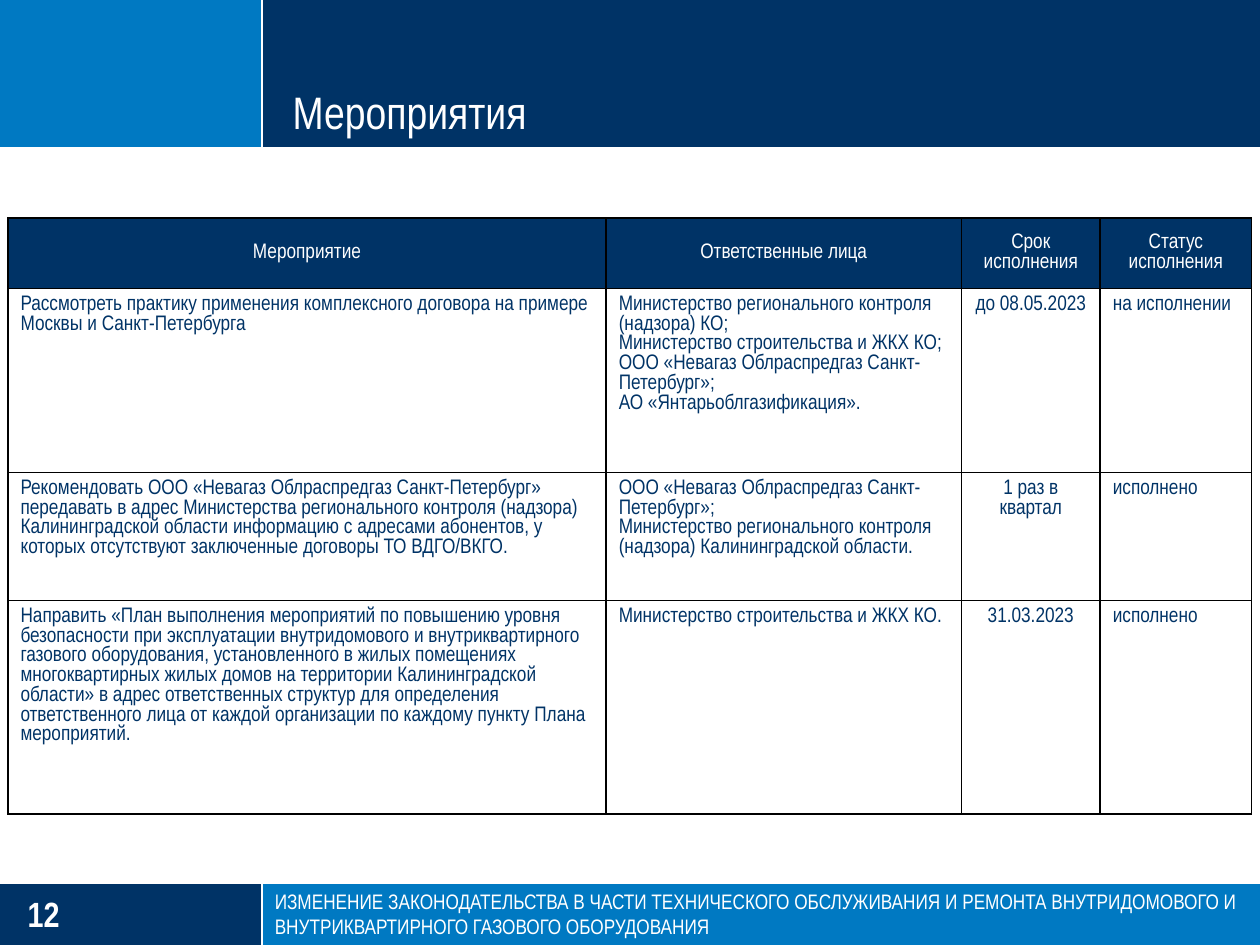
from lxml.etree import SubElement
from pptx import Presentation
from pptx.dml.color import RGBColor
from pptx.enum.shapes import MSO_CONNECTOR as Connector, MSO_SHAPE as Shape
from pptx.enum.text import MSO_ANCHOR as Anchor, PP_ALIGN as Align
from pptx.oxml.ns import qn
from pptx.util import Cm, Pt

NAVY, BLUE, WHITE, BLACK = "003366", "0079C2", "FFFFFF", "000000"
FONT = "Arial Narrow"
WIDTH, HEIGHT = 25.4, 19.05
DIVIDER_X, HEADER_BOTTOM, FOOTER_TOP = 5.28, 2.98, 17.8

COLUMN_WIDTHS = [12.06, 7.16, 2.8, 3.05]
ROW_HEIGHTS = [1.43, 3.71, 2.58, 4.3]
HEADINGS = ["Мероприятие", "Ответственные лица", "Срок исполнения", "Статус исполнения"]
GAS_SUPPLIER = "ООО «Невагаз Облраспредгаз Санкт-Петербург»"
ACTIVITIES = [
    ["Рассмотреть практику применения комплексного договора на примере Москвы и Санкт-Петербурга",
     "Министерство регионального контроля (надзора) КО;\n"
     "Министерство строительства и ЖКХ КО;\n"
     f"{GAS_SUPPLIER};\n"
     "АО «Янтарьоблгазификация».",
     "до 08.05.2023", "на исполнении"],
    [f"Рекомендовать {GAS_SUPPLIER} передавать в адрес Министерства регионального "
     "контроля (надзора) Калининградской области информацию с адресами абонентов, "
     "у которых отсутствуют заключенные договоры ТО ВДГО/ВКГО.",
     f"{GAS_SUPPLIER};\n"
     "Министерство регионального контроля (надзора) Калининградской области.",
     "1 раз в квартал", "исполнено"],
    ["Направить «План выполнения мероприятий по повышению уровня безопасности при "
     "эксплуатации внутридомового и внутриквартирного газового оборудования, "
     "установленного в жилых помещениях многоквартирных жилых домов на территории "
     "Калининградской области» в адрес ответственных структур для определения "
     "ответственного лица от каждой организации по каждому пункту Плана мероприятий.",
     "Министерство строительства и ЖКХ КО.",
     "31.03.2023", "исполнено"],
]
FOOTER = ("ИЗМЕНЕНИЕ ЗАКОНОДАТЕЛЬСТВА В ЧАСТИ ТЕХНИЧЕСКОГО ОБСЛУЖИВАНИЯ И РЕМОНТА "
          "ВНУТРИДОМОВОГО И ВНУТРИКВАРТИРНОГО ГАЗОВОГО ОБОРУДОВАНИЯ")


def rgb(color):
    return RGBColor.from_string(color)


def write_text(frame, text, size=12, color=WHITE, bold=False, align=Align.LEFT):
    """Write one paragraph per line of text."""
    for index, line in enumerate(text.split("\n")):
        paragraph = frame.add_paragraph() if index else frame.paragraphs[0]
        paragraph.alignment = align
        run = paragraph.add_run()
        run.text = line
        run.font.name, run.font.size, run.font.bold = FONT, Pt(size), bold
        run.font.color.rgb = rgb(color)


def add_band(slide, left, top, width, height, color):
    band = slide.shapes.add_shape(Shape.RECTANGLE, Cm(left), Cm(top), Cm(width), Cm(height))
    band.shadow.inherit = False
    band.fill.solid()
    band.fill.fore_color.rgb = rgb(color)
    band.line.fill.background()


def add_rule(slide, x1, y1, x2, y2):
    rule = slide.shapes.add_connector(Connector.STRAIGHT, Cm(x1), Cm(y1), Cm(x2), Cm(y2))
    rule.line.color.rgb = rgb(WHITE)
    rule.line.width = Pt(1.25)
    SubElement(rule._element.spPr, qn("a:effectLst"))


def add_label(slide, left, top, width, height, text, anchor=Anchor.MIDDLE, **text_format):
    frame = slide.shapes.add_textbox(Cm(left), Cm(top), Cm(width), Cm(height)).text_frame
    frame.word_wrap = True
    frame.vertical_anchor = anchor
    frame.margin_left = frame.margin_right = frame.margin_top = frame.margin_bottom = 0
    write_text(frame, text, **text_format)


def add_borders(cell):
    properties = cell._tc.get_or_add_tcPr()
    for side in ("lnL", "lnR", "lnT", "lnB"):
        border = SubElement(properties, qn(f"a:{side}"), w=str(Pt(1)))
        fill = SubElement(border, qn("a:solidFill"))
        SubElement(fill, qn("a:srgbClr"), val=BLACK)


def add_activity_table(slide, left, top):
    rows = [HEADINGS] + ACTIVITIES
    table = slide.shapes.add_table(
        len(rows), len(HEADINGS), Cm(left), Cm(top),
        Cm(sum(COLUMN_WIDTHS)), Cm(sum(ROW_HEIGHTS))).table
    table.first_row = table.horz_banding = False
    for column, width in zip(table.columns, COLUMN_WIDTHS):
        column.width = Cm(width)
    for row, height in zip(table.rows, ROW_HEIGHTS):
        row.height = Cm(height)

    for r, texts in enumerate(rows):
        heading = r == 0
        for c, text in enumerate(texts):
            cell = table.cell(r, c)
            add_borders(cell)
            cell.vertical_anchor = Anchor.MIDDLE if heading else Anchor.TOP
            if heading:
                cell.fill.solid()
                cell.fill.fore_color.rgb = rgb(NAVY)
            else:
                cell.fill.background()
            centred = heading or HEADINGS[c] == "Срок исполнения"
            write_text(cell.text_frame, text, color=WHITE if heading else NAVY,
                       align=Align.CENTER if centred else Align.LEFT)


def main():
    deck = Presentation()
    deck.slide_width, deck.slide_height = Cm(WIDTH), Cm(HEIGHT)
    slide = deck.slides.add_slide(deck.slide_layouts[6])

    # Header and footer bands
    add_band(slide, 0, FOOTER_TOP, WIDTH, HEIGHT - FOOTER_TOP, BLUE)
    add_band(slide, 0, FOOTER_TOP, DIVIDER_X, HEIGHT - FOOTER_TOP, NAVY)
    add_band(slide, 0, 0, DIVIDER_X, HEADER_BOTTOM, BLUE)
    add_band(slide, DIVIDER_X, 0, WIDTH - DIVIDER_X, HEADER_BOTTOM, NAVY)

    # White dividing rules
    for y in (HEADER_BOTTOM, FOOTER_TOP):
        add_rule(slide, 0, y, WIDTH, y)
    for top, bottom in ((0, HEADER_BOTTOM), (FOOTER_TOP, HEIGHT)):
        add_rule(slide, DIVIDER_X, top, DIVIDER_X, bottom)

    # Title, activities and footer
    add_label(slide, 5.9, 0, 18.87, 2.8, "Мероприятия", anchor=Anchor.BOTTOM, size=26)
    add_activity_table(slide, 0.16, 4.39)
    add_label(slide, 0.56, 17.98, 4.14, 0.87, "12", size=20, bold=True)
    add_label(slide, 5.54, 17.98, 19.5, 0.87, FOOTER)

    deck.save("out.pptx")


if __name__ == "__main__":
    main()
